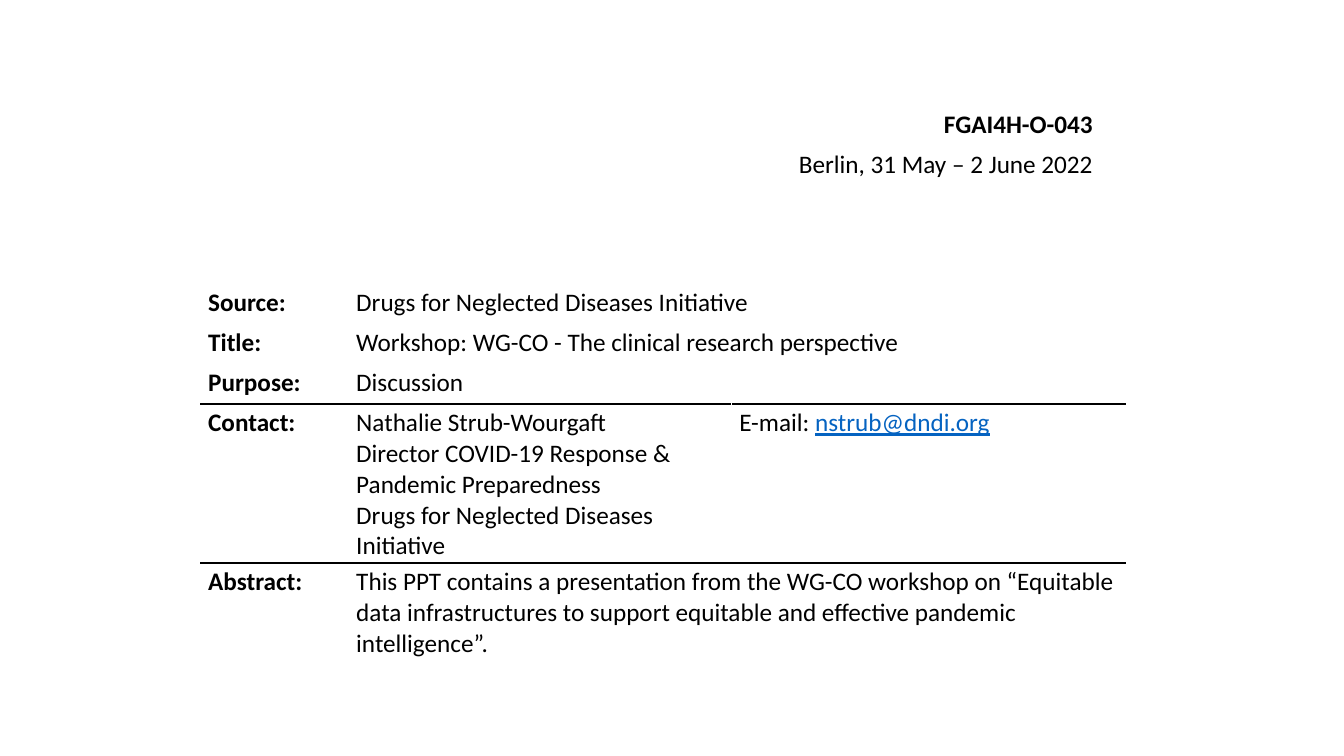
from lxml import etree
from pptx import Presentation
from pptx.dml.color import RGBColor
from pptx.enum.text import MSO_AUTO_SIZE, PP_ALIGN
from pptx.oxml import parse_xml
from pptx.oxml.ns import nsdecls
from pptx.util import Pt

COLOURS = {"ink": "000000", "address": "0563C1"}
FONT = "Calibri"


def add_run(paragraph, text, bold=False, colour="ink", underline=False):
    run = paragraph.add_run()
    run.text = text
    font = run.font
    font.name, font.size, font.bold = FONT, Pt(18), bold
    font.underline = underline
    font.color.rgb = RGBColor.from_string(COLOURS[colour])


def add_rule(cell, side):
    """Draw a border on the side "T" (top) or "B" (bottom) of a cell."""
    border = parse_xml(
        f'<a:ln{side} {nsdecls("a")} w="{Pt(1.5)}"><a:solidFill>'
        f'<a:srgbClr val="{COLOURS["ink"]}"/></a:solidFill></a:ln{side}>')
    properties = cell._tc.get_or_add_tcPr()
    properties.insert(len(properties.findall(etree.QName(border).text[:0] + "{*}lnT")), border)


deck = Presentation()
deck.slide_width, deck.slide_height = Pt(960), Pt(540)
slide = deck.slides.add_slide(deck.slide_layouts[6])

# Document number and meeting, aligned on the right
for text, left, top, width, bold in [
    ("FGAI4H-O-043", 666, 73.5, 121.7, True),
    ("Berlin, 31 May – 2 June 2022", 561, 102.6, 226.7, False),
]:
    heading = slide.shapes.add_textbox(Pt(left), Pt(top), Pt(width), Pt(29)).text_frame
    heading.word_wrap = False
    heading.auto_size = MSO_AUTO_SIZE.SHAPE_TO_FIT_TEXT
    heading.paragraphs[0].alignment = PP_ALIGN.RIGHT
    add_run(heading.paragraphs[0], text, bold)

# Document details
details = [
    ("Source:", "Drugs for Neglected Diseases Initiative"),
    ("Title:", "Workshop: WG-CO - The clinical research perspective"),
    ("Purpose:", "Discussion"),
    ("Contact:", "Nathalie Strub-Wourgaft"),
    ("Abstract:", "This PPT contains a presentation from the WG-CO workshop on "
     "“Equitable data infrastructures to support equitable and effective "
     "pandemic intelligence”."),
]
PURPOSE, CONTACT, ABSTRACT = 2, 3, 4
col_widths = [105.8, 273.6, 281.5]
row_heights = [28.8, 28.8, 28.8, 113.6, 70]

table = slide.shapes.add_table(
    len(details), len(col_widths), Pt(143.3), Pt(202.3),
    Pt(sum(col_widths)), Pt(sum(row_heights))).table
table.first_row = table.horz_banding = False
for column, width in zip(table.columns, col_widths):
    column.width = Pt(width)
for row, height in zip(table.rows, row_heights):
    row.height = Pt(height)

for cell in table.iter_cells():
    cell.fill.background()
    cell.margin_left = cell.margin_right = Pt(5.4)
    cell.margin_top = cell.margin_bottom = Pt(2.7)

for row, (label, value) in enumerate(details):
    if row != CONTACT:
        table.cell(row, 1).merge(table.cell(row, 2))
    add_run(table.cell(row, 0).text_frame.paragraphs[0], label, bold=True)
    add_run(table.cell(row, 1).text_frame.paragraphs[0], value)

contact = table.cell(CONTACT, 1).text_frame
contact.paragraphs[0].add_line_break()
add_run(contact.paragraphs[0], "Director COVID-19 Response & Pandemic Preparedness")
add_run(contact.add_paragraph(), "Drugs for Neglected Diseases Initiative")

email = table.cell(CONTACT, 2).text_frame.paragraphs[0]
add_run(email, "E-mail: ")
add_run(email, "nstrub@dndi.org", colour="address", underline=True)

for row, sides in [(PURPOSE, "B"), (CONTACT, "TB"), (ABSTRACT, "T")]:
    for column in range(len(col_widths)):
        for side in sides:
            add_rule(table.cell(row, column), side)

deck.save("out.pptx")
